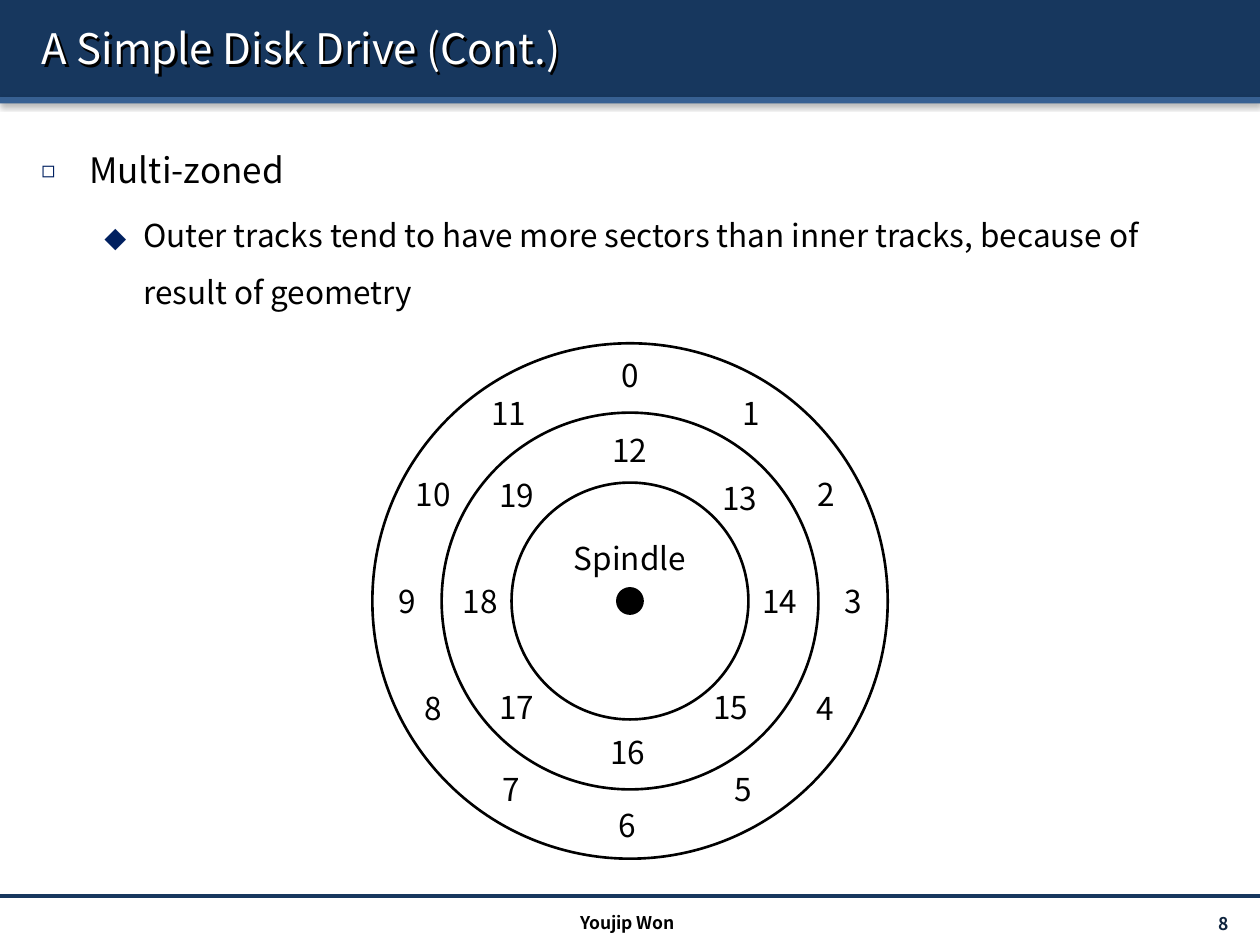
"""Builds a slide on multi-zoned disk tracks."""
from lxml.etree import SubElement
from pptx import Presentation
from pptx.dml.color import RGBColor
from pptx.enum.shapes import MSO_CONNECTOR, MSO_SHAPE
from pptx.enum.text import MSO_ANCHOR, MSO_AUTO_SIZE, PP_ALIGN
from pptx.oxml import parse_xml
from pptx.oxml.ns import qn
from pptx.util import Inches, Pt

FONT = "Noto Sans CJK KR"
HEX = {"navy": "17375E", "blue": "376092", "mark": "002060", "page": "0F243E",
       "black": "000000", "white": "FFFFFF"}
TITLE = "A Simple Disk Drive (Cont.)"
BARS = [(0, 0.77, "navy"), (0.77, 0.05, "blue")]
POINTS = [
    ("Multi-zoned", 20, "◻", 65, 0.38, 0.38, 0),
    ("Outer tracks tend to have more sectors than inner tracks, because of "
     "result of geometry", 18, "⬥", 100, 0.81, 0.31, 4),
]
FOOT = [("8", 8.68, 7.21, 1.17, "page", PP_ALIGN.RIGHT),
        ("Youjip Won", 3.32, 7.2, 3.32, "black", PP_ALIGN.CENTER)]
HUB = (5, 4.77)
RINGS = [4.09, 2.99, 1.88, 0.2]
OUTER = [(5, 2.98), (5.96, 3.28), (6.56, 3.92), (6.77, 4.77), (6.55, 5.62),
         (5.9, 6.26), (4.98, 6.55), (4.06, 6.26), (3.44, 5.62), (3.23, 4.77),
         (3.44, 3.92), (4.04, 3.28)]
INNER = [(5, 3.57), (5.87, 3.95), (6.19, 4.77), (5.8, 5.61), (4.98, 5.97),
         (4.1, 5.61), (3.81, 4.77), (4.1, 3.93)]
LABELS = [(str(n), spot) for n, spot in enumerate(OUTER + INNER)]
LABELS.append(("Spindle", (5, 4.43)))
WIDE = {1: 0.34, 2: 0.48, 7: 1.4}


def rgb(name):
    return RGBColor.from_string(HEX[name])


def shade(blur, dist, angle, alpha):
    return parse_xml(
        '<a:effectLst xmlns:a="http://schemas.openxmlformats.org/drawingml/2006/main">'
        f'<a:outerShdw blurRad="{Pt(blur)}" dist="{Pt(dist)}" dir="{angle * 60000}" '
        f'rotWithShape="0"><a:srgbClr val="{HEX["black"]}"><a:alpha val="{alpha * 1000}"/>'
        '</a:srgbClr></a:outerShdw></a:effectLst>')


def style(para, size, color="black", bold=False, align=PP_ALIGN.LEFT):
    para.alignment = align
    for run in para.runs:
        font = run.font
        font.name, font.size, font.bold = FONT, Pt(size), bold
        font.color.rgb = rgb(color)


def add_text(slide, text, box, size, **look):
    frame = slide.shapes.add_textbox(*map(Inches, box)).text_frame
    frame.text = text
    style(frame.paragraphs[0], size, **look)
    return frame


def add_bars(slide):
    for top, high, color in BARS:
        bar = slide.shapes.add_shape(MSO_SHAPE.RECTANGLE, 0, Inches(top),
                                     Inches(10), Inches(high))
        bar.fill.solid()
        bar.fill.fore_color.rgb = rgb(color)
        bar.line.fill.background()
        bar._element.spPr.append(shade(3.1, 1.6, 90, 38))
    rule = slide.shapes.add_connector(MSO_CONNECTOR.STRAIGHT, 0, Inches(7.11),
                                      Inches(10), Inches(7.11))
    rule.line.color.rgb = rgb("navy")
    rule.line.width = Pt(2)
    SubElement(rule._element.spPr, qn("a:effectLst"))


def add_title(slide):
    title = slide.shapes.title
    title.left, title.top, title.width, title.height = map(
        Inches, (0.23, 0.06, 9.61, 0.64))
    title.fill.background()
    title._element.spPr.append(shade(0, 2, 45, 100))
    frame = title.text_frame
    frame.text = TITLE
    frame.vertical_anchor = MSO_ANCHOR.MIDDLE
    style(frame.paragraphs[0], 24, "white")
    slide.shapes._spTree.append(title._element)


def add_points(slide):
    frame = slide.shapes.add_textbox(*map(Inches, (0.23, 0.96, 9.61, 1.6))).text_frame
    frame.word_wrap = True
    for n, (text, size, mark, scale, left, hang, gap) in enumerate(POINTS):
        para = frame.add_paragraph() if n else frame.paragraphs[0]
        para.text = text
        para.level = n
        para.line_spacing = 1.5
        para.space_before = Pt(gap)
        props = para._p.get_or_add_pPr()
        props.set("marL", str(Inches(left)))
        props.set("indent", str(-Inches(hang)))
        tint = SubElement(props, qn("a:buClr"))
        SubElement(tint, qn("a:srgbClr"), val=HEX["mark"])
        SubElement(props, qn("a:buSzPct"), val=str(scale * 1000))
        SubElement(props, qn("a:buFont"), typeface=FONT)
        SubElement(props, qn("a:buChar"), char=mark)
        style(para, size)


def add_disk(slide):
    x, y = HUB
    for size in RINGS:
        ring = slide.shapes.add_shape(
            MSO_SHAPE.OVAL, Inches(x - size / 2), Inches(y - size / 2),
            Inches(size), Inches(size))
        ring.shadow.inherit = False
        ring.fill.background()
        ring.line.color.rgb = rgb("black")
        ring.line.width = Pt(1.5)
    ring.fill.solid()
    ring.fill.fore_color.rgb = rgb("black")
    for text, (x, y) in LABELS:
        wide = WIDE[len(text)]
        frame = add_text(slide, text, (x - wide / 2, y - 0.2, wide, 0.4), 18,
                         align=PP_ALIGN.CENTER)
        frame.word_wrap = False
        frame.auto_size = MSO_AUTO_SIZE.SHAPE_TO_FIT_TEXT


def add_foot(slide):
    for text, left, top, wide, color, align in FOOT:
        frame = add_text(slide, text, (left, top, wide, 0.24), 10,
                         color=color, bold=True, align=align)
        frame.word_wrap = True
        frame.vertical_anchor = MSO_ANCHOR.MIDDLE


def main():
    deck = Presentation()
    deck.slide_width, deck.slide_height = Inches(10), Inches(7.5)
    slide = deck.slides.add_slide(deck.slide_layouts[5])
    for step in (add_bars, add_title, add_foot, add_points, add_disk):
        step(slide)
    deck.save("out.pptx")


if __name__ == "__main__":
    main()
